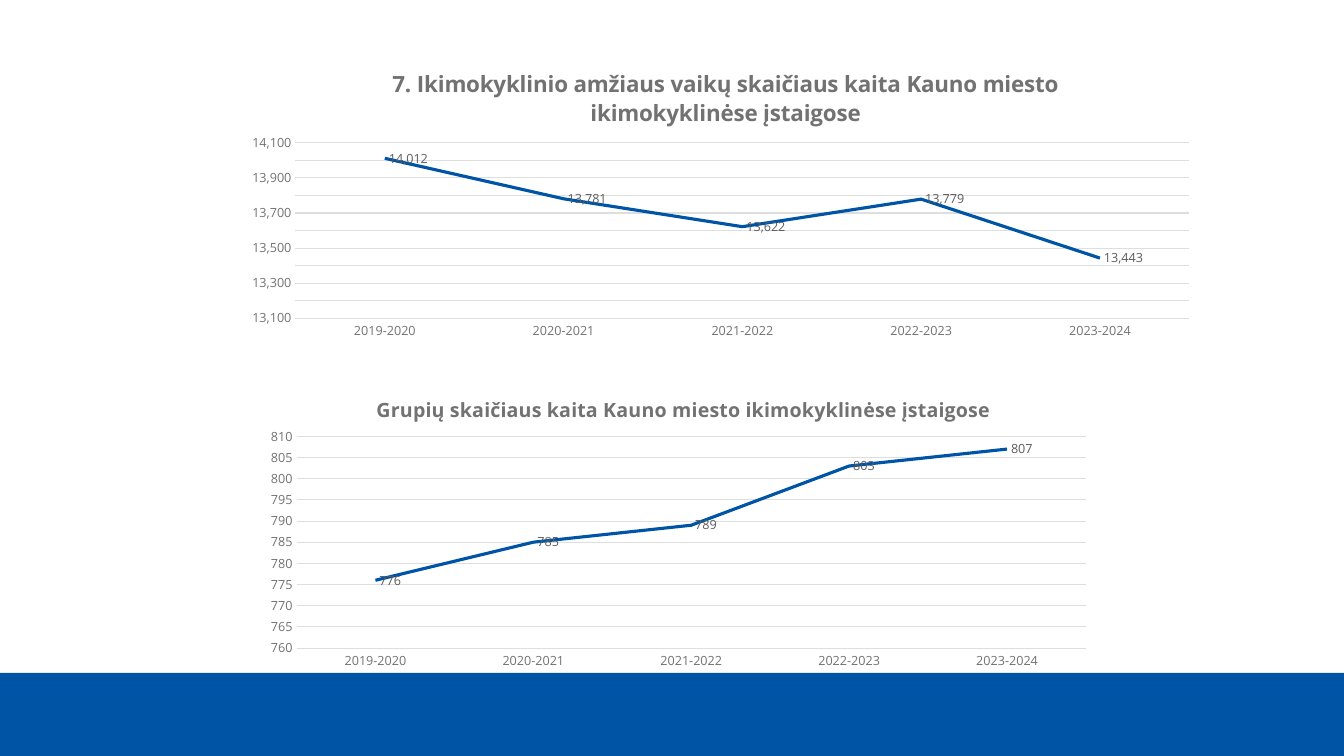
from lxml import etree
from pptx import Presentation
from pptx.chart.data import CategoryChartData
from pptx.dml.color import RGBColor
from pptx.enum.chart import XL_CHART_TYPE as ChartType
from pptx.enum.chart import XL_LABEL_POSITION as LabelPos
from pptx.enum.chart import XL_TICK_MARK as Tick
from pptx.enum.shapes import MSO_SHAPE as Shape
from pptx.oxml.ns import qn
from pptx.util import Inches, Pt

W, H = 13.33, 7.5
FONT = "Open Sans"
BLUE, GREY, DARK, LABEL, RULE = "0054A5", "727272", "262626", "5C5C5C", "DEDEDE"
YEARS = ["2019-2020", "2020-2021", "2021-2022", "2022-2023", "2023-2024"]


def rgb(code):
    return RGBColor.from_string(code)


def style(font, size, color, bold=False):
    font.name, font.size, font.bold = FONT, Pt(size), bold
    font.color.rgb = rgb(color)


def rule(line, color, width):
    line.color.rgb = rgb(color)
    line.width = Pt(width)


def place(element, inner=False, **shares):
    """Fix a chart part at shares of the chart's box."""
    layout = element.find(qn("c:layout"))
    if layout is None:
        layout = etree.Element(qn("c:layout"))
        before = element.find(qn("c:tx"))
        element.insert(0 if before is None else 1, layout)
    for child in list(layout):
        layout.remove(child)
    manual = etree.SubElement(layout, qn("c:manualLayout"))
    values = {"xMode": "edge", "yMode": "edge", **shares}
    if inner:
        values = {"layoutTarget": "inner", **values}
    for tag, value in values.items():
        etree.SubElement(manual, qn("c:" + tag)).set("val", str(value))


def footer_band(s, x, y, w, h):
    band = s.shapes.add_shape(Shape.RECTANGLE, Inches(x), Inches(y), Inches(w), Inches(h))
    band.shadow.inherit = False
    band.fill.solid()
    band.fill.fore_color.rgb = rgb(BLUE)
    band.line.fill.background()


def line_chart(s, box, title, size, title_at, values, scale, plot_at):
    data = CategoryChartData(number_format="#,##0")
    data.categories = YEARS
    data.add_series("Series 1", values)
    frame = s.shapes.add_chart(ChartType.LINE, *map(Inches, box), data)
    chart = frame.chart
    style(chart.font, 10, DARK)
    chart.has_legend = False

    # Title
    tf = chart.chart_title.text_frame
    r = tf.paragraphs[0].add_run()
    r.text = title
    style(r.font, size, GREY, bold=True)
    chart.chart_title.include_in_layout = False
    place(chart.chart_title._element, **dict(zip("xy", title_at)))

    # Axes
    for axis in (chart.category_axis, chart.value_axis):
        axis.major_tick_mark = axis.minor_tick_mark = Tick.NONE
        style(axis.tick_labels.font, 9, GREY)
    rule(chart.category_axis.format.line, RULE, 0.75)
    axis = chart.value_axis
    axis.minimum_scale, axis.maximum_scale, axis.major_unit = scale
    axis.format.line.fill.background()
    rule(axis.major_gridlines.format.line, RULE, 0.75)
    axis.tick_labels.number_format = "#,##0"
    axis.tick_labels.number_format_is_linked = False

    # Line and its labels
    plot = chart.plots[0]
    plot.vary_by_categories = False
    series = plot.series[0]
    series.smooth = False
    rule(series.format.line, BLUE, 2.25)
    labels = series.data_labels
    labels.show_value = True
    labels.position = LabelPos.RIGHT
    labels.number_format = "#,##0"
    labels.number_format_is_linked = False
    style(labels.font, 9, LABEL)
    area = chart._chartSpace.chart.plotArea
    place(area, inner=True, **dict(zip("xywh", plot_at)))


def main():
    prs = Presentation()
    prs.slide_width, prs.slide_height = Inches(W), Inches(H)
    s = prs.slides.add_slide(prs.slide_layouts[6])

    footer_band(s, 0, 0.89 * H, W, 0.11 * H)
    line_chart(
        s, (2.3, 0.44, 9.69, 3),
        "7. Ikimokyklinio amžiaus vaikų skaičiaus kaita Kauno miesto ikimokyklinėse įstaigose",
        16, (0.16, 0.06), (14012, 13781, 13622, 13779, 13443),
        (13100, 14100, 100), (0.065, 0.326, 0.915, 0.58))
    line_chart(
        s, (2.52, 3.7, 8.42, 3),
        "Grupių skaičiaus kaita Kauno miesto ikimokyklinėse įstaigose",
        14, (0.14, 0.06), (776, 785, 789, 803, 807),
        (760, 810, 5), (0.05, 0.21, 0.93, 0.7))
    prs.save("out.pptx")


if __name__ == "__main__":
    main()
